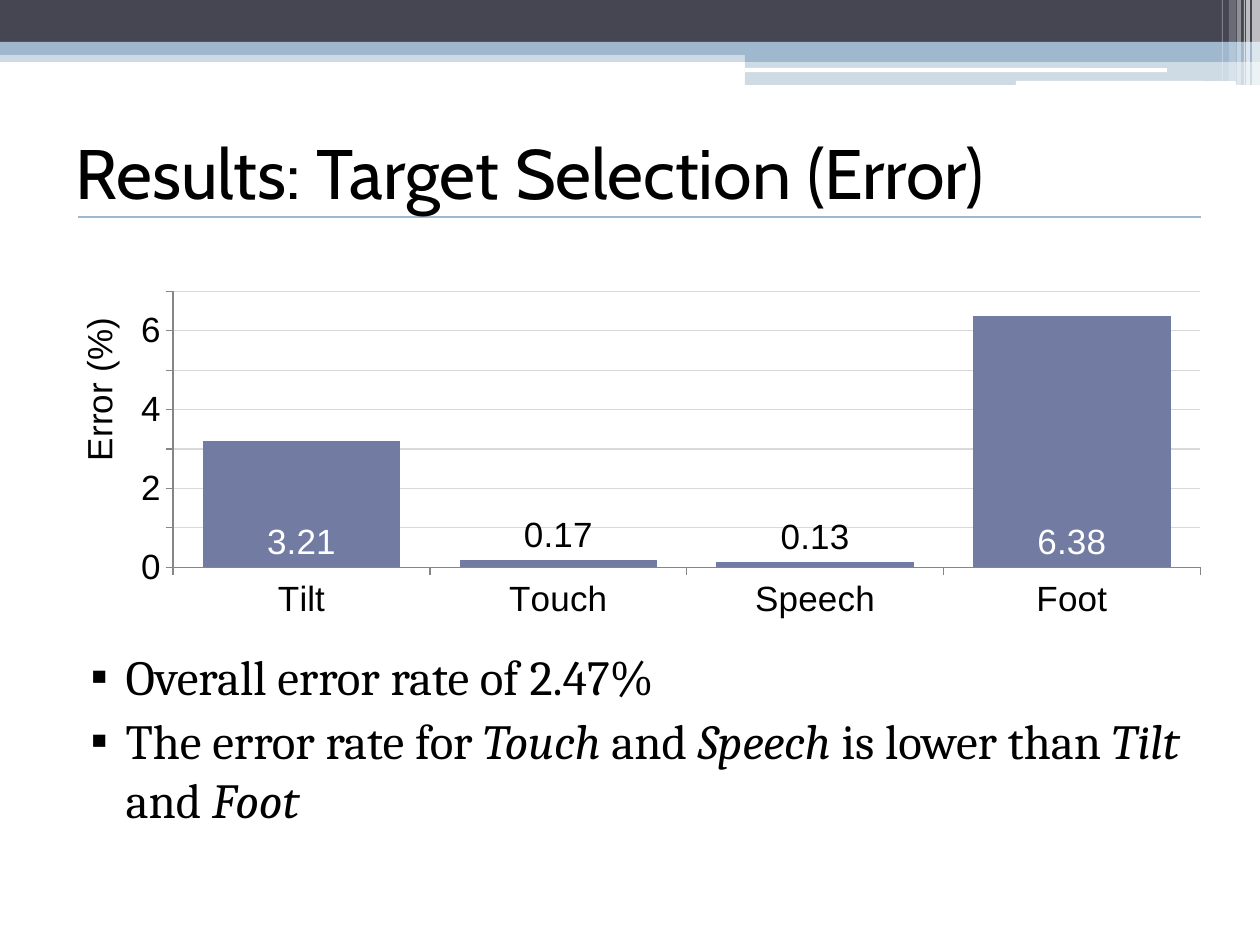
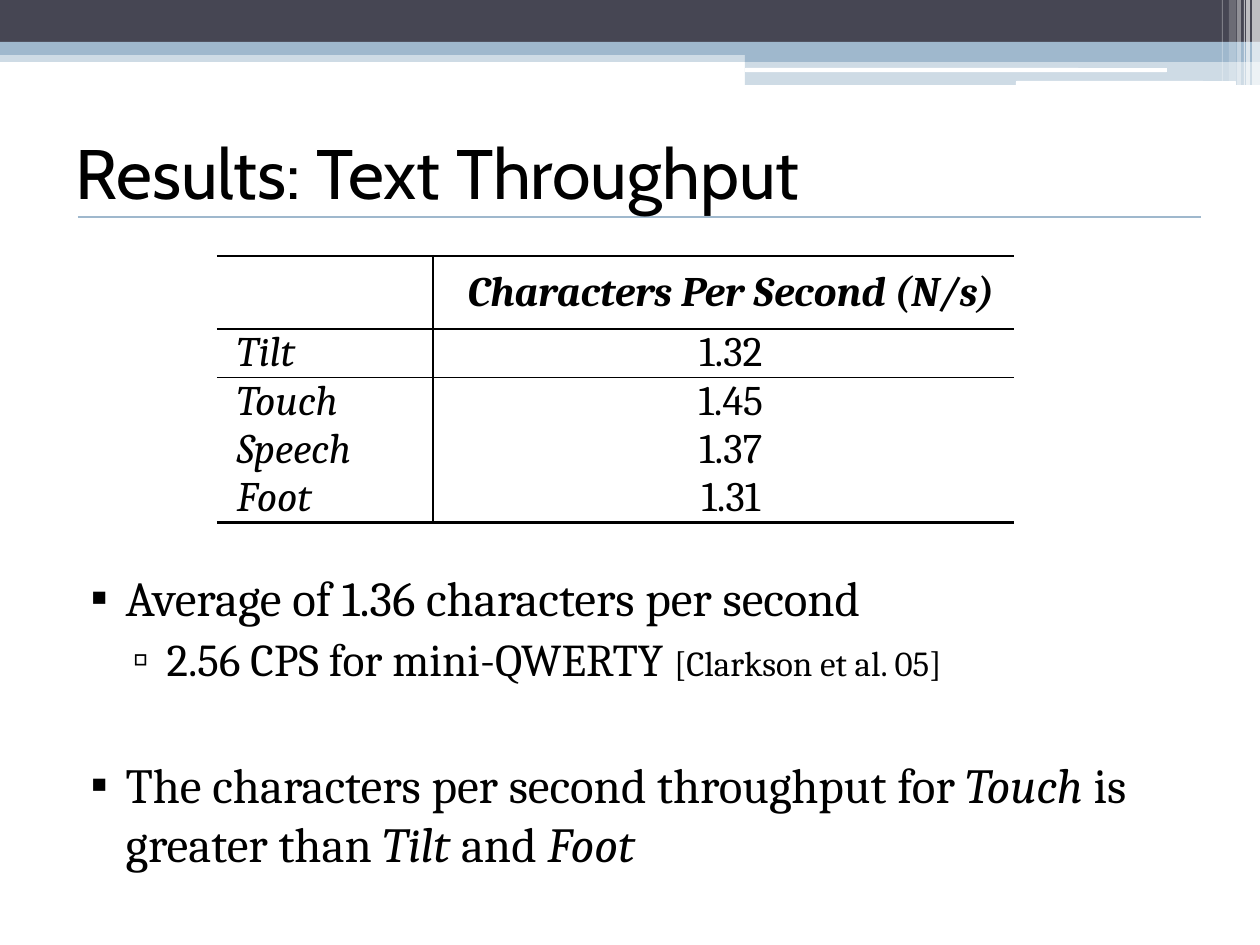
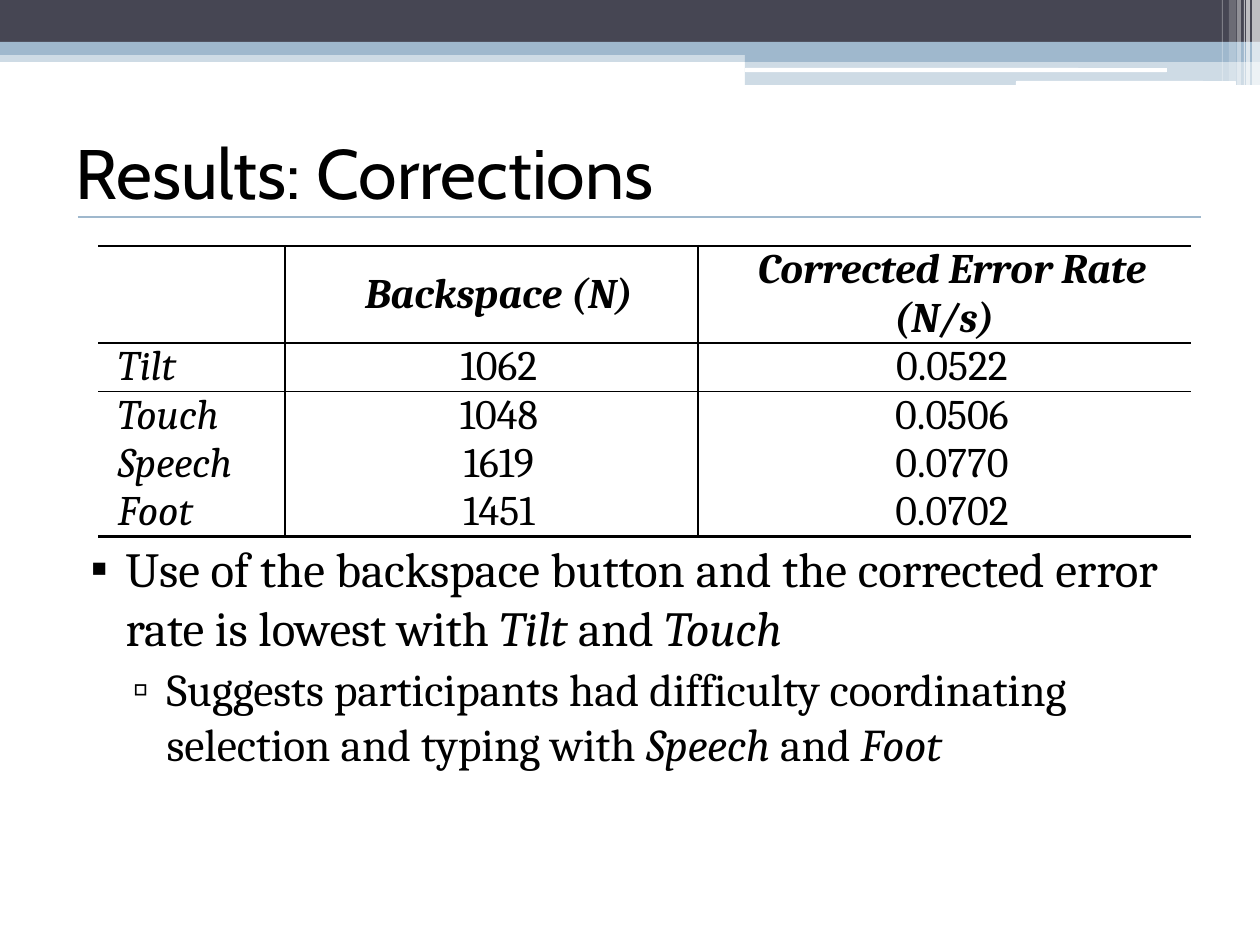
from dataclasses import dataclass

from lxml import etree
from pptx import Presentation
from pptx import util as u
from pptx.chart.data import CategoryChartData
from pptx.dml.color import RGBColor
from pptx.enum import chart as ch, shapes, text
from pptx.oxml.ns import qn

PX = 914400 / 126
SLIDE_W, SLIDE_H = 1260, 945


@dataclass(frozen=True)
class Theme:
    dark: str = "464653"
    accent: str = "9FB8CD"
    bar: str = "727CA3"
    ink: str = "000000"
    paper: str = "FFFFFF"
    grid: str = "D9D9D9"
    axis: str = "868686"
    title_font: str = "Cabin"
    body_font: str = "Cambria"
    chart_font: str = "Arial"
    title: int = 40
    body: tuple = (28, 26)
    cite: int = 20
    chart: int = 20
    table: int = 24


T = Theme()
BULLETS = (("▪", 50, -35), ("▫", 91, -34))  # character, margin, hanging indent
TITLE_BOX = (63, 98, 1134, 147)
# left, top, width, height, colour, opacity in percent
BANDS = (
    (0, 50, SLIDE_W, 12, T.accent, 50),
    (0, 0, SLIDE_W, 42, T.dark, 100),
    (0, 42, SLIDE_W, 13, T.accent, 100),
    (745, 49, 515, 13, T.accent, 100),
    (745, 61, 515, 24, T.accent, 50),
)
SLITS = ((745, 68, 422, 4, T.paper, 100), (1016, 81, 220, 5, T.paper, 100))
STRIPES = (
    (1252, 0, 8, 86, T.paper, 65),
    (1246, 0, 4, 86, T.paper, 65),
    (1244, 0, 1, 86, T.paper, 60),
    (1237, 0, 4, 86, T.paper, 40),
    (1229, 0, 7, 81, T.paper, 20),
    (1222, 0, 1, 81, T.paper, 30),
)


@dataclass
class Item:
    """A list entry; words between asterisks are italic."""
    words: str
    level: int = 0
    before: int = 3
    cite: str = ""


def px(n):
    return u.Emu(round(n * PX))


def rgb(colour):
    return RGBColor.from_string(colour)


def apply(obj, **values):
    for name, value in values.items():
        setattr(obj, name, value)


def place(sp, box):
    apply(sp, **dict(zip(("left", "top", "width", "height"), map(px, box))))


def style_font(font, name, size, colour=T.ink, **extra):
    apply(font, name=name, size=u.Pt(size), **extra)
    font.color.rgb = rgb(colour)


def child(parent, tag, **attrs):
    return etree.SubElement(parent, qn(tag), {k: str(v) for k, v in attrs.items()})


def indent(p, margin, first):
    pPr = p._p.get_or_add_pPr()
    pPr.set("marL", str(px(margin)))
    pPr.set("indent", str(px(first)))
    return pPr


def add_band(slide, kind, left, top, width, height, colour, opacity):
    sp = slide.shapes.add_shape(kind, *map(px, (left, top, width, height)))
    sp.shadow.inherit = False
    sp.fill.solid()
    sp.fill.fore_color.rgb = rgb(colour)
    sp.line.fill.background()
    if opacity < 100:
        clr = sp._element.spPr.find(".//" + qn("a:srgbClr"))
        child(clr, "a:alpha", val=opacity * 1000)
    return sp


def add_rule(slide, x1, x2, y):
    line = slide.shapes.add_connector(shapes.MSO_CONNECTOR.STRAIGHT, px(x1), px(y), px(x2), px(y))
    line.line.color.rgb = rgb(T.accent)
    line.line.width = u.Pt(1.5)
    child(line._element.spPr, "a:effectLst")
    return line


def decorate_layout(layout, slide):
    """Draw the header on a slide, then move it to the layout that all slides share."""
    rect, rounded = shapes.MSO_SHAPE.RECTANGLE, shapes.MSO_SHAPE.ROUNDED_RECTANGLE
    parts = []
    for kind, group in ((rect, BANDS), (rounded, SLITS), (rect, STRIPES)):
        parts += [add_band(slide, kind, *band) for band in group]
    parts.append(add_rule(slide, 78, 1201, 217))
    for number, sp in enumerate(parts, 100):
        sp._element.xpath(".//p:cNvPr")[0].set("id", str(number))
        layout.shapes._spTree.append(sp._element)


def add_title(slide, words):
    sp = slide.shapes.title
    place(sp, TITLE_BOX)
    tf = sp.text_frame
    apply(tf, vertical_anchor=text.MSO_ANCHOR.MIDDLE, auto_size=text.MSO_AUTO_SIZE.NONE)
    p = tf.paragraphs[0]
    p.alignment = text.PP_ALIGN.LEFT
    r = p.add_run()
    r.text = words
    style_font(r.font, T.title_font, T.title)


def add_list(slide, box, items):
    sp = slide.placeholders[1]
    place(sp, box)
    tf = sp.text_frame
    tf.auto_size = text.MSO_AUTO_SIZE.NONE
    for i, item in enumerate(items):
        p = tf.add_paragraph() if i else tf.paragraphs[0]
        apply(p, level=item.level, space_before=u.Pt(item.before))
        mark, margin, hang = BULLETS[item.level]
        pPr = indent(p, margin, hang)
        child(child(pPr, "a:buClr"), "a:srgbClr", val=T.ink)
        child(pPr, "a:buChar", char=mark)
        size = T.body[item.level]
        runs = [(part, size, bool(k % 2)) for k, part in enumerate(item.words.split("*"))]
        runs.append((item.cite, T.cite, False))
        for part, points, italic in runs:
            if part:
                r = p.add_run()
                r.text = part
                style_font(r.font, T.body_font, points, italic=italic)


def set_layout(parent, index, **fractions):
    """Fix the position of a chart part, as fractions of the chart."""
    for old in parent.findall(qn("c:layout")):
        parent.remove(old)
    layout = etree.Element(qn("c:layout"))
    parent.insert(index, layout)
    manual = child(layout, "c:manualLayout")
    if "w" in fractions:
        child(manual, "c:layoutTarget", val="inner")
    for mode in ("xMode", "yMode"):
        child(manual, "c:" + mode, val="edge")
    for name, value in fractions.items():
        child(manual, "c:" + name, val=value)


def add_error_chart(slide, box, rates):
    data = CategoryChartData()
    data.categories = list(rates)
    data.add_series("Series 1", list(rates.values()))
    chart = slide.shapes.add_chart(ch.XL_CHART_TYPE.COLUMN_CLUSTERED, *map(px, box), data).chart
    apply(chart, has_title=False, has_legend=False)
    style_font(chart.font, T.chart_font, T.chart)

    value_axis, category_axis = chart.value_axis, chart.category_axis
    apply(value_axis, minimum_scale=0, maximum_scale=7, major_unit=1)
    apply(value_axis.tick_labels, number_format="0", number_format_is_linked=False)
    for axis in (value_axis, category_axis):
        axis.major_tick_mark = ch.XL_TICK_MARK.OUTSIDE
        axis.format.line.color.rgb = rgb(T.axis)
    grid = value_axis.major_gridlines.format.line
    grid.color.rgb = rgb(T.grid)
    grid.width = u.Pt(0.75)

    p = value_axis.axis_title.text_frame.paragraphs[0]
    r = p.add_run()
    r.text = "Error (%)"
    style_font(r.font, T.chart_font, T.chart, bold=False)
    set_layout(value_axis.axis_title._element, 1, x=0.01, y=0.14)
    set_layout(chart._chartSpace.chart.plotArea, 0, x=0.1, y=0.09, w=0.9, h=0.7)

    plot = chart.plots[0]
    apply(plot, gap_width=30, vary_by_categories=False)
    series = plot.series[0]
    series.format.fill.solid()
    series.format.fill.fore_color.rgb = rgb(T.bar)
    labels = series.data_labels
    apply(labels, show_value=True, number_format="#,##0.00", number_format_is_linked=False,
          position=ch.XL_LABEL_POSITION.OUTSIDE_END)
    style_font(labels.font, T.chart_font, T.chart)
    for i, rate in enumerate(rates.values()):
        if rate > 1:  # tall bars carry their label inside
            label = series.points[i].data_label
            style_font(label.font, T.chart_font, T.chart, T.paper)
            label.position = ch.XL_LABEL_POSITION.INSIDE_BASE


def set_borders(cell, **widths):
    tcPr = cell._tc.get_or_add_tcPr()
    for i, side in enumerate(s for s in "LRTB" if s in widths):
        ln = etree.Element(qn("a:ln" + side), w=str(u.Pt(widths[side])))
        child(child(ln, "a:solidFill"), "a:srgbClr", val=T.ink)
        tcPr.insert(i, ln)


def cell_borders(row, col, last_row):
    widths = {"R": 1} if col == 0 else {"L": 1} if col == 1 else {}
    if row < 2:
        widths["T"] = 1 if row else 1.5
    if row in (0, last_row):
        widths["B"] = 1.5 if row else 1
    return widths


def add_results_table(slide, left, top, columns, header_height, row_height, rows):
    heights = [header_height] + [row_height] * (len(rows) - 1)
    box = (left, top, sum(columns), sum(heights))
    table = slide.shapes.add_table(len(rows), len(columns), *map(px, box)).table
    apply(table, first_row=False, horz_banding=False)
    # "No Style, No Grid"
    table._tbl.tblPr.find(qn("a:tableStyleId")).text = "{2D5ABB26-0587-4C30-8999-92F81FD0307C}"
    for column, width in zip(table.columns, columns):
        column.width = px(width)
    for row, height in zip(table.rows, heights):
        row.height = px(height)
    for i, values in enumerate(rows):
        for j, words in enumerate(values):
            cell = table.cell(i, j)
            left_inset, right_inset = (3, 3) if i == 0 else (5, 3) if j == 0 else (8, 8)
            apply(cell, vertical_anchor=text.MSO_ANCHOR.MIDDLE, margin_top=0, margin_bottom=0,
                  margin_left=px(left_inset), margin_right=px(right_inset))
            cell.fill.background()
            set_borders(cell, **cell_borders(i, j, len(rows) - 1))
            if words:
                p = cell.text_frame.paragraphs[0]
                p.alignment = text.PP_ALIGN.CENTER if j else text.PP_ALIGN.JUSTIFY
                indent(p, 0, 15)
                r = p.add_run()
                r.text = words
                style_font(r.font, T.body_font, T.table, bold=i == 0, italic=i == 0 or j == 0)


def error_slide(slide):
    add_title(slide, "Results: Target Selection (Error)")
    add_list(slide, (63, 640, 1134, 202), [
        Item("Overall error rate of 2.47%"),
        Item("The error rate for *Touch* and *Speech* is lower than *Tilt* and *Foot*"),
    ])
    add_error_chart(slide, (59, 256, 1142, 394),
                    {"Tilt": 3.21, "Touch": 0.17, "Speech": 0.13, "Foot": 6.38})


def throughput_slide(slide):
    add_title(slide, "Results: Text Throughput")
    add_list(slide, (63, 561, 1134, 325), [
        Item("Average of 1.36 characters per second"),
        Item("2.56 CPS for mini-QWERTY ", level=1, cite="[Clarkson et al. 05]"),
        Item("The characters per second throughput for *Touch* is greater than *Tilt* and *Foot*",
             before=39),
    ])
    add_results_table(slide, 217, 256, (216, 581), 73, 48, (
        ("", "Characters Per Second (N/s)"),
        ("Tilt", "1.32"),
        ("Touch", "1.45"),
        ("Speech", "1.37"),
        ("Foot", "1.31"),
    ))


def corrections_slide(slide):
    add_title(slide, "Results: Corrections")
    add_list(slide, (63, 532, 1158, 354), [
        Item("Use of the backspace button and the corrected error rate is lowest with "
             "*Tilt* and *Touch*"),
        Item("Suggests participants had difficulty coordinating selection and typing with "
             "*Speech* and *Foot*", level=1),
    ])
    add_results_table(slide, 98, 246, (187, 413, 493), 97, 48, (
        ("", "Backspace (N)", "Corrected Error Rate (N/s)"),
        ("Tilt", "1062", "0.0522"),
        ("Touch", "1048", "0.0506"),
        ("Speech", "1619", "0.0770"),
        ("Foot", "1451", "0.0702"),
    ))


def main():
    prs = Presentation()
    apply(prs, slide_width=px(SLIDE_W), slide_height=px(SLIDE_H))
    layout = prs.slide_layouts[1]
    for i, build in enumerate((error_slide, throughput_slide, corrections_slide)):
        slide = prs.slides.add_slide(layout)
        if i == 0:
            decorate_layout(layout, slide)
        build(slide)
    prs.save("out.pptx")


if __name__ == "__main__":
    main()
